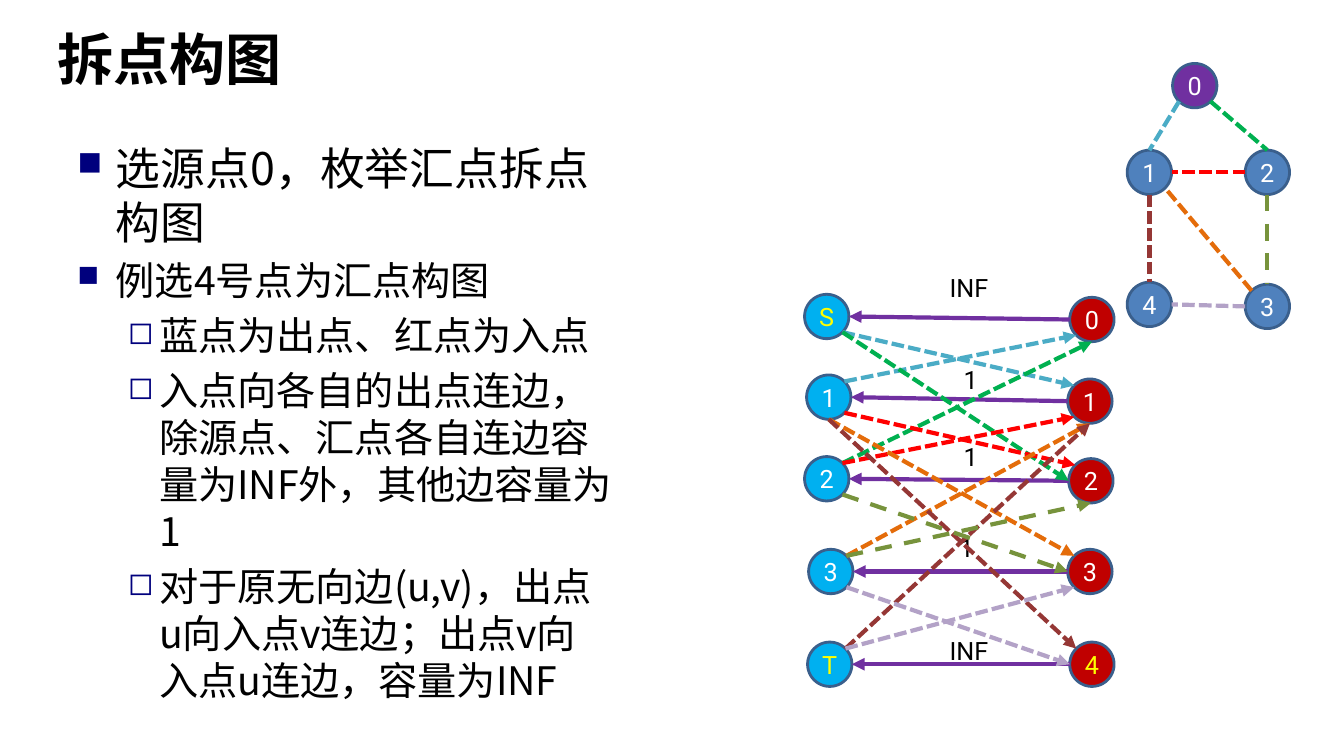
import math

import pptx
import pptx.util
import pptx.dml.color
import pptx.enum.dml
import pptx.enum.shapes
import pptx.enum.text
import pptx.oxml.ns
from lxml import etree

Inches = pptx.util.Inches
Pt = pptx.util.Pt
qn = pptx.oxml.ns.qn

NODE_SIZE = 0.44
BODY_FONT = "Noto Sans CJK SC"
COMPASS = {"E": 0, "SE": 45, "S": 90, "SW": 135, "W": 180, "NW": 225, "N": 270, "NE": 315}

PURPLE, BLUE, SKY, RED, WHITE, YELLOW = "7030A0", "4F81BD", "00B0F0", "C00000", "FFFFFF", "FFFF00"
TEAL, GREEN, SCARLET, ORANGE = "4BACC6", "00B050", "FF0000", "E46C0A"
BROWN, OLIVE, LILAC = "953735", "77933C", "B3A2C7"

GRAPH_NODES = [
    ("0", 11.63, 0.63, PURPLE, WHITE),
    ("1", 11.18, 1.49, BLUE, WHITE),
    ("2", 12.35, 1.49, BLUE, WHITE),
    ("4", 11.18, 2.8, BLUE, WHITE),
    ("3", 12.35, 2.82, BLUE, WHITE),
]
OUT_NODES = [
    ("S", 7.98, 2.92, SKY, YELLOW),
    ("1", 8, 3.72, SKY, WHITE),
    ("2", 7.98, 4.53, SKY, WHITE),
    ("3", 8.02, 5.45, SKY, WHITE),
    ("T", 8.01, 6.37, SKY, YELLOW),
]
IN_NODES = [
    ("0", 10.61, 2.95, RED, WHITE),
    ("1", 10.59, 3.76, RED, WHITE),
    ("2", 10.6, 4.55, RED, WHITE),
    ("3", 10.59, 5.45, RED, WHITE),
    ("4", 10.61, 6.37, RED, YELLOW),
]
GRAPH_EDGES = [
    ("0", "SW", "1", "N", TEAL),
    ("0", "SE", "2", "N", GREEN),
    ("1", "S", "4", "N", BROWN),
    ("3", "W", "4", "E", LILAC),
    ("2", "W", "1", "E", SCARLET),
    ("3", "NW", "1", "SE", ORANGE),
    ("2", "S", "3", "N", OLIVE),
]
SPLIT_EDGES = [
    ("S", "SE", "1", "NW", TEAL),
    ("1", "NE", "0", "SW", TEAL),
    ("S", "SE", "2", "W", GREEN),
    ("2", "NE", "0", "S", GREEN),
    ("1", "SE", "2", "NW", SCARLET),
    ("2", "NE", "1", "SW", SCARLET),
    ("1", "S", "3", "NW", ORANGE),
    ("3", "NE", "1", "S", ORANGE),
    ("1", "S", "4", "NW", BROWN),
    ("T", "NE", "1", "S", BROWN),
    ("2", "SE", "3", "W", OLIVE),
    ("3", "NE", "2", "S", OLIVE),
    ("3", "SE", "4", "W", LILAC),
    ("T", "NE", "3", "SW", LILAC),
]
CAPACITIES = [
    ("INF", 9.32, 2.65, 0.59),
    ("1", 9.46, 3.57, 0.32),
    ("1", 9.46, 4.33, 0.32),
    ("1", 9.42, 5.23, 0.32),
    ("INF", 9.32, 6.25, 0.59),
]
TOP, SUB = ("■", 75, 0.38, 0.38), ("◻", 80, 0.81, 0.31)
BODY = [
    ("选源点0，枚举汇点拆点构图", 32, TOP),
    ("例选4号点为汇点构图", 28, TOP),
    ("蓝点为出点、红点为入点", 28, SUB),
    ("入点向各自的出点连边，除源点、汇点各自连边容量为INF外，其他边容量为1", 28, SUB),
    ("对于原无向边(u,v)，出点u向入点v连边；出点v向入点u连边，容量为INF", 28, SUB),
]


def rgb(value):
    return pptx.dml.color.RGBColor.from_string(value)


def style(para, size, font, color, bold=False):
    para.font.size = Pt(size)
    para.font.name = font
    para.font.bold = bold
    para.font.color.rgb = rgb(color)
    defaults = para._p.pPr.find(qn("a:defRPr"))
    etree.SubElement(defaults, qn("a:ea")).set("typeface", BODY_FONT)


def add_text(page, text, left, top, width, height, size, font, bold=False, wrap=False):
    box = page.shapes.add_textbox(Inches(left), Inches(top), Inches(width), Inches(height))
    box.text_frame.word_wrap = wrap
    para = box.text_frame.paragraphs[0]
    para.text = text
    style(para, size, font, "000000", bold)
    return box


def add_bullet(para, symbol, percent, margin, hanging):
    props = para._p.get_or_add_pPr()
    props.set("marL", str(Inches(margin)))
    props.set("indent", str(-Inches(hanging)))
    tint = etree.SubElement(props, qn("a:buClr"))
    etree.SubElement(tint, qn("a:srgbClr")).set("val", "00007D")
    etree.SubElement(props, qn("a:buSzPct")).set("val", str(percent * 1000))
    etree.SubElement(props, qn("a:buChar")).set("char", symbol)


def add_body(page):
    box = page.shapes.add_textbox(Inches(0.67), Inches(1.31), Inches(5.5), Inches(6.07))
    frame = box.text_frame
    frame.word_wrap = True
    frame.margin_top = Inches(0.09)
    for index, (text, size, bullet) in enumerate(BODY):
        para = frame.add_paragraph() if index else frame.paragraphs[0]
        para.text = text
        add_bullet(para, *bullet)
        para.line_spacing = Pt(size * 1.2)
        para.space_before = Pt(size * 0.2 if index else 0)
        style(para, size, BODY_FONT, "000000")


def add_node(page, text, left, top, fill, color):
    node = page.shapes.add_shape(
        pptx.enum.shapes.MSO_SHAPE.OVAL,
        Inches(left), Inches(top), Inches(NODE_SIZE), Inches(NODE_SIZE))
    node.shadow.inherit = False
    node.fill.solid()
    node.fill.fore_color.rgb = rgb(fill)
    node.line.color.rgb = rgb("3A5F8C")
    node.line.width = Pt(2)
    frame = node.text_frame
    frame.word_wrap = False
    frame.margin_left = frame.margin_right = frame.margin_top = frame.margin_bottom = 0
    frame.vertical_anchor = pptx.enum.text.MSO_ANCHOR.MIDDLE
    para = frame.paragraphs[0]
    para.text = text
    para.alignment = pptx.enum.text.PP_ALIGN.CENTER
    style(para, 18, "Roboto", color)
    return node


def add_nodes(page, nodes):
    return {node[0]: add_node(page, *node) for node in nodes}


def rim_point(node, direction):
    angle = math.radians(COMPASS[direction])
    radius = node.width / 2
    return (round(node.left + radius * (1 + math.cos(angle))),
            round(node.top + radius * (1 + math.sin(angle))))


def add_edge(page, start, start_side, end, end_side, color, dashed=True, arrow=True):
    edge = page.shapes.add_connector(
        pptx.enum.shapes.MSO_CONNECTOR.STRAIGHT,
        *rim_point(start, start_side), *rim_point(end, end_side))
    edge.line.color.rgb = rgb(color)
    edge.line.width = Pt(3)
    if dashed:
        dashes = pptx.enum.dml.MSO_LINE
        edge.line.dash_style = dashes.DASH if color == OLIVE else dashes.SQUARE_DOT
    if arrow:
        etree.SubElement(edge.line._get_or_add_ln(), qn("a:tailEnd")).set("type", "triangle")
    etree.SubElement(edge._element.spPr, qn("a:effectLst"))


def main():
    deck = pptx.Presentation()
    deck.slide_width, deck.slide_height = Inches(13.33), Inches(7.5)
    page = deck.slides.add_slide(deck.slide_layouts[6])

    title = add_text(page, "拆点构图", 0.47, 0.11, 12.4, 0.94, 40, "Arial", bold=True, wrap=True)
    title.text_frame.vertical_anchor = pptx.enum.text.MSO_ANCHOR.MIDDLE
    add_body(page)

    graph = add_nodes(page, GRAPH_NODES)
    for start, start_side, end, end_side, color in GRAPH_EDGES:
        add_edge(page, graph[start], start_side, graph[end], end_side, color, arrow=False)

    outs, ins = add_nodes(page, OUT_NODES), add_nodes(page, IN_NODES)
    for entry, leave in zip(ins.values(), outs.values()):
        add_edge(page, entry, "W", leave, "E", PURPLE, dashed=False)
    for text, left, top, width in CAPACITIES:
        add_text(page, text, left, top, width, 0.4, 18, "Roboto")
    for start, start_side, end, end_side, color in SPLIT_EDGES:
        add_edge(page, outs[start], start_side, ins[end], end_side, color)

    deck.save("out.pptx")


if __name__ == "__main__":
    main()
